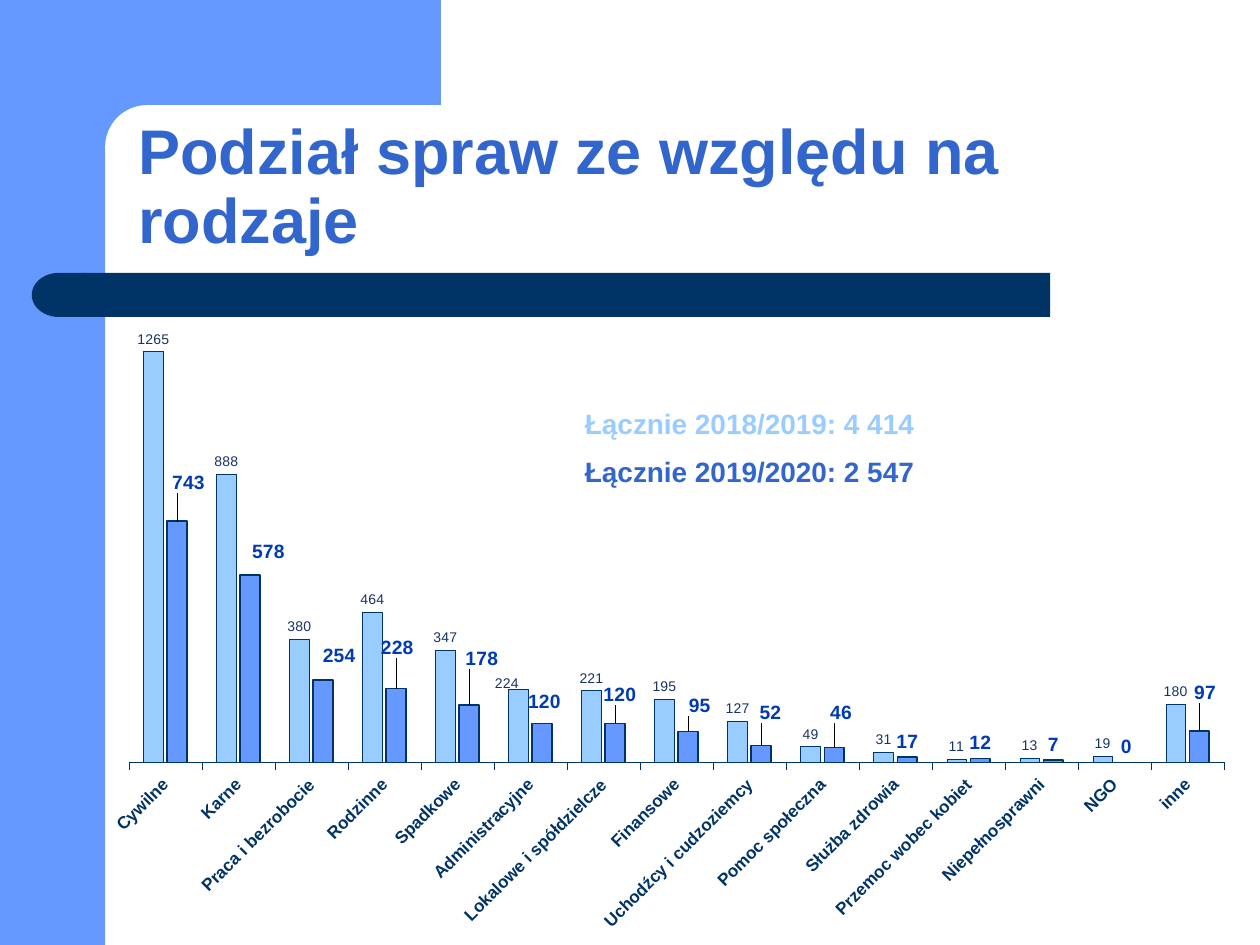
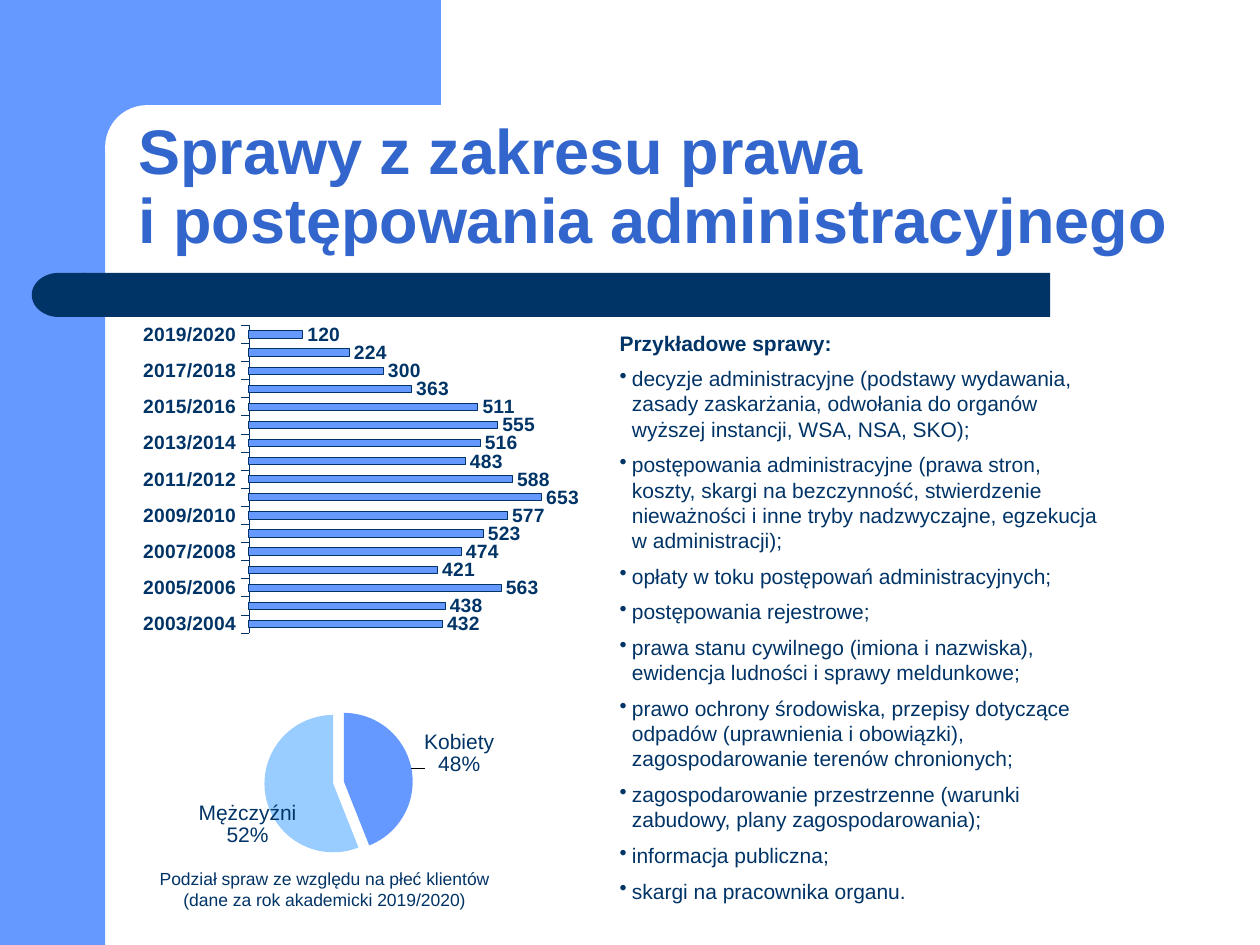
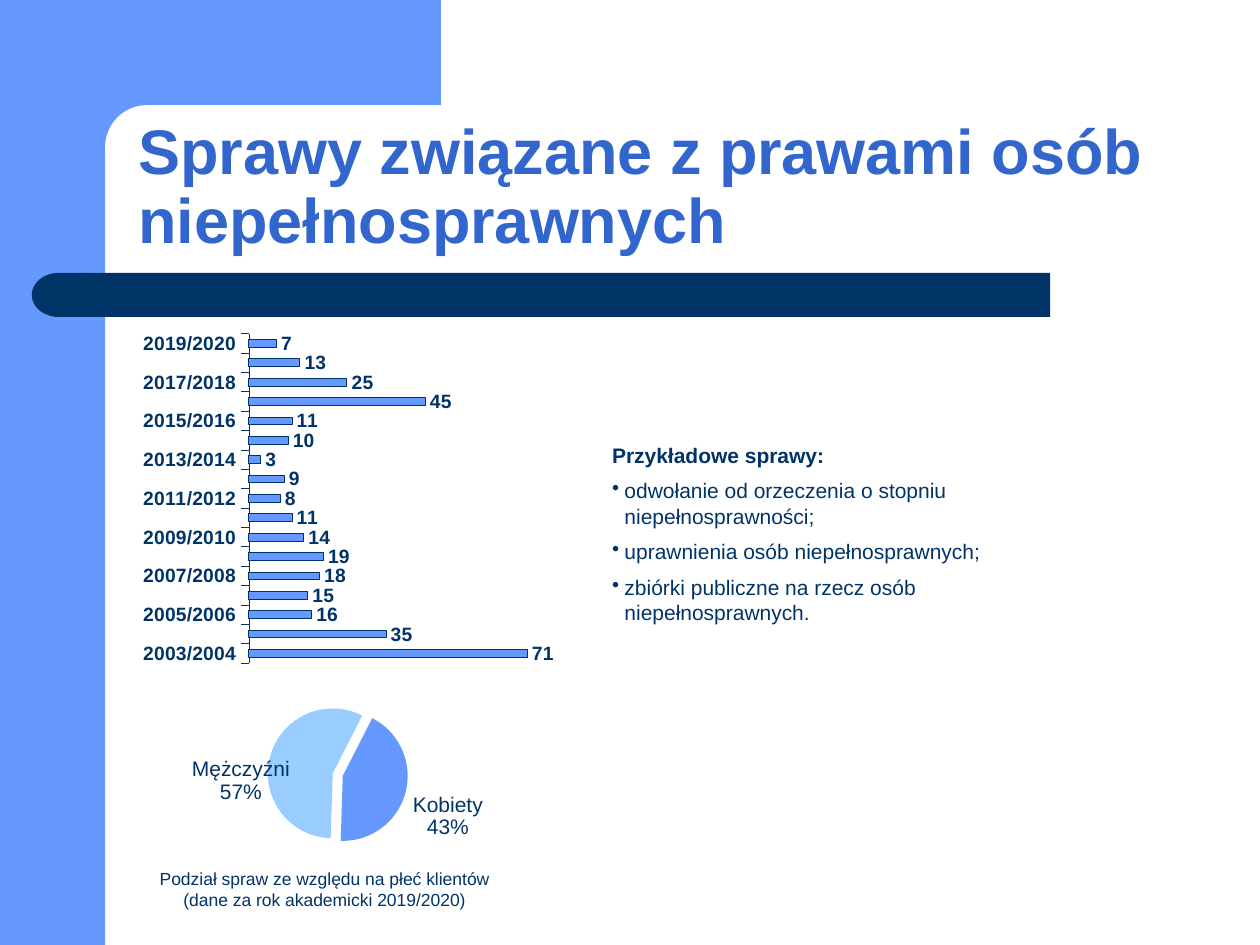
from dataclasses import dataclass, field
from typing import NamedTuple

import pptx
import pptx.chart.data
import pptx.dml.color
import pptx.enum.chart
import pptx.enum.shapes
import pptx.enum.text
import pptx.oxml
import pptx.oxml.ns
import pptx.util

Cm, Pt = pptx.util.Cm, pptx.util.Pt
MSO = pptx.enum.shapes.MSO_SHAPE
XL = pptx.enum.chart.XL_CHART_TYPE
OUTSIDE = pptx.enum.chart.XL_LABEL_POSITION.OUTSIDE_END
CENTER = pptx.enum.text.PP_ALIGN.CENTER

FONT = "Arial"
NAVY, BLUE, SKY, TITLE_BLUE = "003366", "6699FF", "99CCFF", "3366CC"


class Box(NamedTuple):
    """Left, top, width and height in centimetres."""
    x: float
    y: float
    w: float
    h: float

    def lengths(self) -> list:
        return [Cm(v) for v in self]


class Band(NamedTuple):
    kind: int
    box: Box
    color: str
    rotation: int = 0


class TextStyle(NamedTuple):
    size: float
    color: str = NAVY
    bold: bool = False


class Line(NamedTuple):
    text: str
    style: TextStyle
    bullet: bool = False


@dataclass
class Series:
    values: list[int]
    color: str
    line_width: float
    label: TextStyle
    shifts: dict = field(default_factory=dict)  # point: (dx, dy) in percent of the chart


@dataclass
class Pie:
    box: Box
    plot: Box  # percent of the chart
    values: list[int]
    shifts: dict
    start: int = 0
    texts: dict = field(default_factory=dict)


@dataclass
class CaseSlide:
    title: str
    examples_box: Box
    examples: list[str]
    years_box: Box
    years: list[int]
    axis_max: int
    pie: Pie


BANDS = [
    Band(MSO.RECTANGLE, Box(0, 0, 2.12, 19.05), BLUE),
    Band(MSO.RECTANGLE, Box(1.9, 0, 6.99, 2.96), BLUE),
    Band(MSO.ROUNDED_RECTANGLE, Box(2.12, 2.12, 14.18, 1.69), "FFFFFF"),
    Band(MSO.RECTANGLE, Box(1.69, 5.5, 19.48, 0.89), NAVY),
    Band(MSO.FLOWCHART_DELAY, Box(0.64, 5.5, 1.09, 0.89), NAVY, 180),
]
TITLE_BOX = Box(2.54, 2.12, 22.23, 3.18)
CAPTION_BOX = Box(2.69, 17.37, 7.7, 1.09)
CAPTION = "Podział spraw ze względu na płeć klientów (dane za rok akademicki 2019/2020)"
TITLE = TextStyle(36, TITLE_BLUE, True)
BODY = TextStyle(12)
HEADING = TextStyle(12, bold=True)
AXIS_BOLD = TextStyle(11, bold=True)
YEARS = [f"{y}/{y + 1}" for y in range(2003, 2020)]

KINDS = ["Cywilne", "Karne", "Praca i bezrobocie", "Rodzinne", "Spadkowe",
         "Administracyjne", "Lokalowe i spółdzielcze", "Finansowe",
         "Uchodźcy i cudzoziemcy", "Pomoc społeczna", "Służba zdrowia",
         "Przemoc wobec kobiet", "Niepełnosprawni", "NGO", "inne"]
KIND_SERIES = [
    Series([1265, 888, 380, 464, 347, 224, 221, 195, 127, 49, 31, 11, 13, 19, 180],
           SKY, 0.25, TextStyle(8, "193366"), {5: (-1, 0.8)}),
    Series([743, 578, 254, 228, 178, 120, 120, 95, 52, 46, 17, 12, 7, 0, 97],
           BLUE, 1, TextStyle(11, "003BB2", True),
           {0: (1, -3.1), 1: (1.6, -1), 2: (1.4, -1.1), 3: (0.1, -3.4),
            4: (1.1, -4.1), 5: (0.2, -0.8), 6: (0.4, -1.8), 7: (1, -1.4),
            8: (0.8, -2.3), 9: (0.6, -2.6), 14: (0.5, -3)}),
]

CASE_SLIDES = [
    CaseSlide(
        "Sprawy z zakresu prawa\vi postępowania administracyjnego",
        Box(12.24, 6.53, 10.26, 12.32),
        ["decyzje administracyjne (podstawy wydawania, zasady zaskarżania, "
         "odwołania do organów wyższej instancji, WSA, NSA, SKO);",
         "postępowania administracyjne (prawa stron, koszty, skargi na bezczynność, "
         "stwierdzenie nieważności i inne tryby nadzwyczajne, egzekucja w administracji);",
         "opłaty w toku postępowań administracyjnych;",
         "postępowania rejestrowe;",
         "prawa stanu cywilnego (imiona i nazwiska), ewidencja ludności i sprawy meldunkowe;",
         "prawo ochrony środowiska, przepisy dotyczące odpadów (uprawnienia i obowiązki), "
         "zagospodarowanie terenów chronionych;",
         "zagospodarowanie przestrzenne (warunki zabudowy, plany zagospodarowania);",
         "informacja publiczna;",
         "skargi na pracownika organu."],
        Box(1.9, 5.99, 11, 7.24),
        [432, 438, 563, 421, 474, 523, 577, 653, 588, 483, 516, 555, 511, 363, 300, 224, 120],
        700,
        Pie(Box(1.04, 13.69, 11, 4.19), Box(39, 14, 27.2, 71.7), [44, 56],
            {0: (1, 4), 1: (7, 2)}, texts={0: "Kobiety\n48%", 1: "Mężczyźni\n52%"})),
    CaseSlide(
        "Sprawy związane z prawami osób niepełnosprawnych",
        Box(12.09, 8.79, 9.32, 4.11),
        ["odwołanie od orzeczenia o stopniu niepełnosprawności;",
         "uprawnienia osób niepełnosprawnych;",
         "zbiórki publiczne na rzecz osób niepełnosprawnych."],
        Box(1.9, 6.12, 11, 7.75),
        [71, 35, 16, 15, 18, 19, 14, 11, 8, 9, 3, 10, 11, 45, 25, 13, 7],
        80,
        Pie(Box(1.04, 13.51, 11, 4.19), Box(39.6, 16.6, 25.7, 67.5), [43, 57],
            {1: (5, 23)}, start=27)),
]


def rgb(color: str):
    return pptx.dml.color.RGBColor.from_string(color)


def chart_xml(body: str):
    return pptx.oxml.parse_xml(body.replace(
        " ", f' {pptx.oxml.ns.nsdecls("c")} ', 1))


def set_font(font, style: TextStyle) -> None:
    font.name, font.size, font.bold = FONT, Pt(style.size), style.bold
    font.color.rgb = rgb(style.color)


def add_bands(slide) -> None:
    for band in BANDS:
        sp = slide.shapes.add_shape(band.kind, *band.box.lengths())
        sp.shadow.inherit = False
        sp.fill.solid()
        sp.fill.fore_color.rgb = rgb(band.color)
        sp.line.fill.background()
        sp.rotation = band.rotation
        if band.kind == MSO.ROUNDED_RECTANGLE:
            sp.adjustments[0] = 0.5


def add_bullet(p) -> None:
    pPr = p._p.get_or_add_pPr()
    pPr.set("marL", str(Cm(0.25)))
    pPr.set("indent", str(-Cm(0.25)))
    pPr.append(pptx.oxml.parse_xml(
        f'<a:buChar {pptx.oxml.ns.nsdecls("a")} char="•"/>'))


def add_text(slide, box: Box, lines: list[Line], align=None):
    tf = slide.shapes.add_textbox(*box.lengths()).text_frame
    tf.word_wrap = True
    for i, line in enumerate(lines):
        p = tf.add_paragraph() if i else tf.paragraphs[0]
        p.text = line.text
        p.alignment = align
        p.space_before = Pt(line.style.size / 2)
        for r in p.runs:
            set_font(r.font, line.style)
        if line.bullet:
            add_bullet(p)
    return tf


def new_slide(prs, title: str):
    slide = prs.slides.add_slide(prs.slide_layouts[6])
    add_bands(slide)
    tf = add_text(slide, TITLE_BOX, [Line(title, TITLE)])
    tf.vertical_anchor = pptx.enum.text.MSO_ANCHOR.BOTTOM
    tf.paragraphs[0].space_before = Pt(0)
    tf.paragraphs[0].line_spacing = 0.9
    return slide


def add_chart(slide, kind, box: Box, plot: Box, cats: list[str], values: list[list[int]], size: float):
    """Add a chart whose inner plot area is given in percent of the chart."""
    data = pptx.chart.data.CategoryChartData()
    data.categories = cats
    for i, vals in enumerate(values, 1):
        data.add_series(f"Series {i}", vals)
    chart = slide.shapes.add_chart(kind, *box.lengths(), data).chart
    chart.has_legend = chart.has_title = False
    set_font(chart.font, TextStyle(size))
    area = chart.element.xpath("//c:plotArea")[0]
    for old in area.xpath("c:layout"):
        area.remove(old)
    sizes = "".join(f'<c:{k} val="{v / 100:.3f}"/>' for k, v in zip("xywh", plot))
    area.insert(0, chart_xml(
        '<c:layout ><c:manualLayout><c:layoutTarget val="inner"/><c:xMode val="edge"/>'
        f'<c:yMode val="edge"/>{sizes}</c:manualLayout></c:layout>'))
    return chart


def shift_labels(chart_series, shifts: dict) -> None:
    """Move data labels, which must exist, by percents of the chart."""
    for dLbl in chart_series.data_labels._element.xpath("c:dLbl"):
        idx = int(dLbl.xpath("c:idx/@val")[0])
        if idx in shifts:
            dx, dy = shifts[idx]
            dLbl.insert(1, chart_xml(
                f'<c:layout ><c:manualLayout><c:x val="{dx / 100:.3f}"/>'
                f'<c:y val="{dy / 100:.3f}"/></c:manualLayout></c:layout>'))


def add_bar_chart(slide, kind, box: Box, plot: Box, cats: list[str], series: list[Series],
                  axis_max: int, size: float, axis_style: TextStyle, axis_line: float):
    chart = add_chart(slide, kind, box, plot, cats, [s.values for s in series], size)
    chart.plots[0].gap_width = 150
    chart.plots[0].vary_by_categories = False
    chart.value_axis.visible = False
    chart.value_axis.has_major_gridlines = False
    chart.value_axis.minimum_scale, chart.value_axis.maximum_scale = 0, axis_max
    axis = chart.category_axis
    axis.has_major_gridlines = False
    axis.major_tick_mark = pptx.enum.chart.XL_TICK_MARK.OUTSIDE
    axis.format.line.color.rgb = rgb(NAVY)
    axis.format.line.width = Pt(axis_line)
    set_font(axis.tick_labels.font, axis_style)
    for ser, s in zip(chart.plots[0].series, series):
        ser.invert_if_negative = False
        ser.format.fill.solid()
        ser.format.fill.fore_color.rgb = rgb(s.color)
        ser.format.line.color.rgb = rgb(NAVY)
        ser.format.line.width = Pt(s.line_width)
        labels = ser.data_labels
        labels.show_value = True
        labels.position = OUTSIDE
        set_font(labels.font, s.label)
        for i in s.shifts:
            label = ser.points[i].data_label
            set_font(label.font, s.label)
            label.position = OUTSIDE
        shift_labels(ser, s.shifts)
    return chart


def show_share(labels) -> None:
    """Show category and percent, on two lines, in a dLbl or dLbls element."""
    for tag, val in (("showVal", "0"), ("showCatName", "1"), ("showPercent", "1")):
        labels.xpath(f"c:{tag}")[0].set("val", val)
    labels.xpath("c:showBubbleSize")[0].addnext(
        chart_xml("<c:separator >\n</c:separator>"))


def add_pie(slide, pie: Pie) -> None:
    chart = add_chart(slide, XL.PIE, pie.box, pie.plot, ["Kobiety", "Mężczyźni"],
                      [pie.values], 17.9)
    ser = chart.plots[0].series[0]
    for i, color in enumerate((BLUE, SKY)):
        fmt = ser.points[i].format
        fmt.fill.solid()
        fmt.fill.fore_color.rgb = rgb(color)
        fmt.line.fill.background()
    ser._element.xpath("c:dPt")[0].addprevious(chart_xml('<c:explosion val="8"/>'))
    chart.element.xpath("//c:pieChart")[0].append(
        chart_xml(f'<c:firstSliceAng val="{pie.start}"/>'))
    labels = ser.data_labels
    labels.position = OUTSIDE
    set_font(labels.font, BODY)
    for i in pie.shifts:
        label = ser.points[i].data_label
        if i in pie.texts:
            label.text_frame.text = pie.texts[i]
            for p in label.text_frame.paragraphs:
                set_font(p.runs[0].font, BODY)
        else:
            set_font(label.font, BODY)
        label.position = OUTSIDE
    for element in (labels._element, *labels._element.xpath("c:dLbl")):
        show_share(element)
    shift_labels(ser, pie.shifts)


def add_kinds_slide(prs) -> None:
    slide = new_slide(prs, "Podział spraw ze względu na rodzaje")
    chart = add_bar_chart(slide, XL.COLUMN_CLUSTERED, Box(2.13, 5.28, 23.27, 14.91),
                          Box(2, 6.2, 94.9, 61.5), KINDS, KIND_SERIES, 1400, 9.5,
                          TextStyle(9.8, bold=True), 0.25)
    chart.plots[0].overlap = -20
    chart.category_axis.tick_label_position = pptx.enum.chart.XL_TICK_LABEL_POSITION.LOW
    chart.element.xpath("//c:catAx/c:txPr/a:bodyPr")[0].set("rot", "-2700000")
    add_text(slide, Box(10.31, 8.08, 9.6, 1.96),
             [Line("Łącznie 2018/2019: 4 414", TextStyle(16, SKY, True)),
              Line("Łącznie 2019/2020: 2 547", TextStyle(16, TITLE_BLUE, True))], CENTER)


def add_case_slide(prs, case: CaseSlide) -> None:
    slide = new_slide(prs, case.title)
    add_text(slide, case.examples_box,
             [Line("Przykładowe sprawy:", HEADING)]
             + [Line(text, BODY, bullet=True) for text in case.examples])
    add_bar_chart(slide, XL.BAR_CLUSTERED, case.years_box, Box(28.3, 7.8, 57.5, 85.7), YEARS,
                  [Series(case.years, BLUE, 0.25, AXIS_BOLD)], case.axis_max, 3.4,
                  AXIS_BOLD, 0.15)
    add_pie(slide, case.pie)
    add_text(slide, CAPTION_BOX, [Line(CAPTION, TextStyle(10))], CENTER)


def main() -> None:
    prs = pptx.Presentation()
    prs.slide_width, prs.slide_height = Cm(25.4), Cm(19.05)
    add_kinds_slide(prs)
    for case in CASE_SLIDES:
        add_case_slide(prs, case)
    prs.save("out.pptx")


if __name__ == "__main__":
    main()
